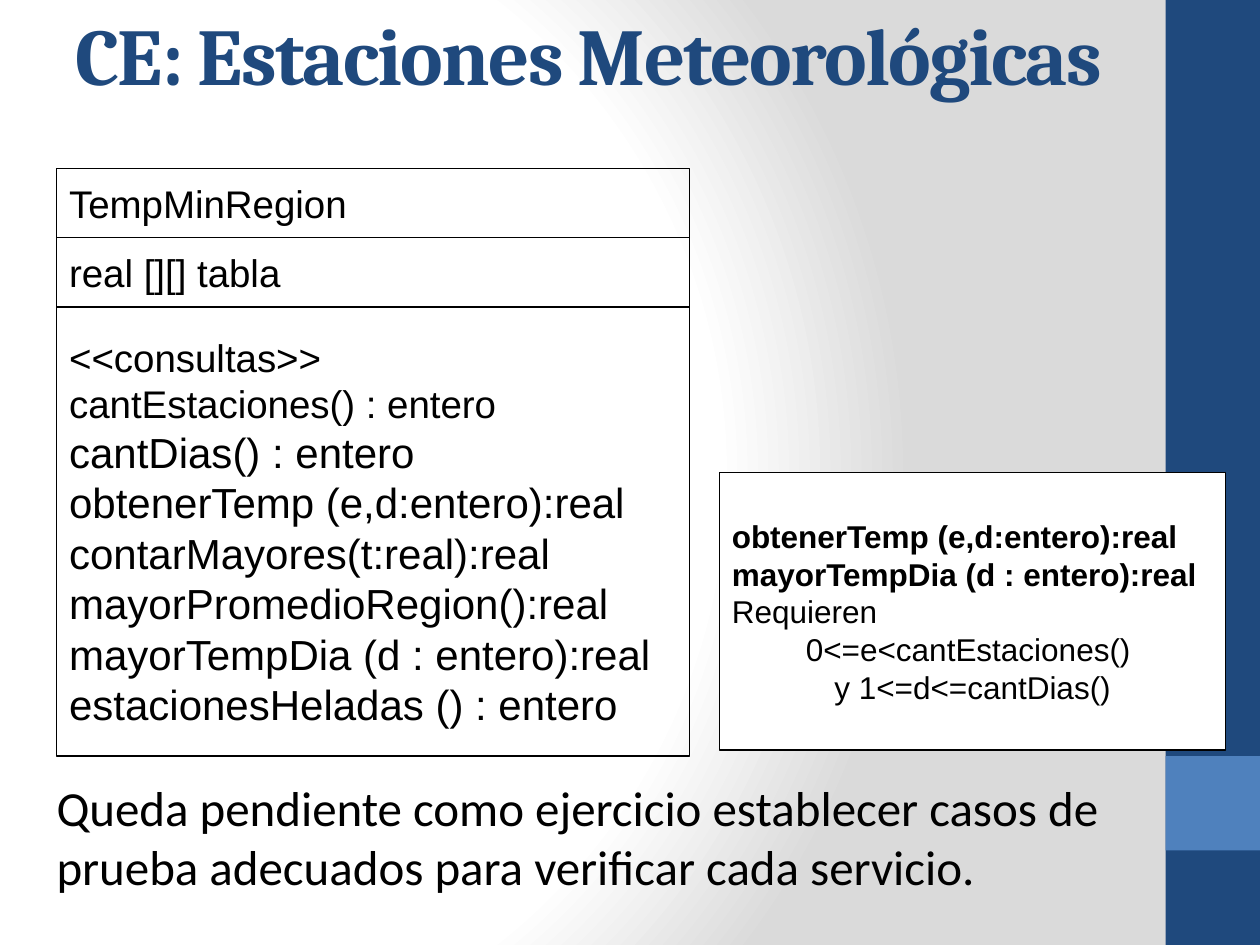
import pptx
import pptx.dml.color
import pptx.enum.shapes
import pptx.enum.text
import pptx.oxml
import pptx.oxml.ns
import pptx.util

Pt = pptx.util.Pt
RGBColor = pptx.dml.color.RGBColor
PP_ALIGN = pptx.enum.text.PP_ALIGN
MSO_ANCHOR = pptx.enum.text.MSO_ANCHOR

NAVY = RGBColor(0x1F, 0x49, 0x7D)
BLUE = RGBColor(0x4F, 0x81, 0xBD)
GREY = RGBColor(0xDA, 0xDA, 0xDA)
WHITE = RGBColor(0xFF, 0xFF, 0xFF)
BLACK = RGBColor(0, 0, 0)

QUERIES = [
    ("<<consultas>>", 22),
    ("cantEstaciones() : entero", 22),
    ("cantDias() : entero", 24),
    ("obtenerTemp (e,d:entero):real", 24),
    ("contarMayores(t:real):real", 24),
    ("mayorPromedioRegion():real", 24),
    ("mayorTempDia (d : entero):real", 24),
    ("estacionesHeladas () : entero", 24),
]
REQUIREMENTS = [
    ("obtenerTemp (e,d:entero):real", True, PP_ALIGN.LEFT),
    ("mayorTempDia (d : entero):real", True, PP_ALIGN.LEFT),
    ("Requieren", False, PP_ALIGN.LEFT),
    ("0<=e<cantEstaciones() ", False, PP_ALIGN.CENTER),
    ("y 1<=d<=cantDias()", False, PP_ALIGN.CENTER),
]


def add_text(p, text, size=22, font="Arial", color=BLACK, bold=False,
             align=PP_ALIGN.LEFT, spacing=None):
    p.alignment = align
    r = p.add_run()
    r.text = text
    r.font.size = Pt(size)
    r.font.name = font
    r.font.bold = bold
    r.font.color.rgb = color
    if spacing is not None:
        r._r.get_or_add_rPr().set("spc", str(spacing))


def add_lines(tf, lines):
    tf.word_wrap = True
    for i, (text, style) in enumerate(lines):
        p = tf.add_paragraph() if i else tf.paragraphs[0]
        add_text(p, text, **style)


def add_box(s, x, y, w, h, fill=None, line=None):
    sp = s.shapes.add_shape(pptx.enum.shapes.MSO_SHAPE.RECTANGLE,
                            Pt(x), Pt(y), Pt(w), Pt(h))
    sp.shadow.inherit = False
    if fill is None:
        sp.fill.background()
    else:
        sp.fill.solid()
        sp.fill.fore_color.rgb = fill
    if line is None:
        sp.line.fill.background()
    else:
        sp.line.color.rgb = line
        sp.line.width = Pt(0.75)
    sp.text_frame.vertical_anchor = MSO_ANCHOR.MIDDLE
    return sp


def add_textbox(s, x, y, w, h, text, anchor=MSO_ANCHOR.TOP, **style):
    tf = s.shapes.add_textbox(Pt(x), Pt(y), Pt(w), Pt(h)).text_frame
    tf.vertical_anchor = anchor
    add_lines(tf, [(text, style)])


def set_background(s):
    fill = s.background.fill
    fill.gradient()
    grad = s._element.cSld.bg.bgPr.find(pptx.oxml.ns.qn("a:gradFill"))
    for child in list(grad):
        grad.remove(child)
    ns = pptx.oxml.ns.nsdecls("a")
    stops = "".join(
        f'<a:gs pos="{pos * 1000}"><a:srgbClr val="{color}"/></a:gs>'
        for pos, color in [(0, WHITE), (75, WHITE), (100, GREY)])
    grad.append(pptx.oxml.parse_xml(f"<a:gsLst {ns}>{stops}</a:gsLst>"))
    grad.append(pptx.oxml.parse_xml(
        f'<a:path {ns} path="circle"><a:fillToRect l="20000" t="50000" '
        'r="100000" b="50000"/></a:path>'))


def add_sidebar(s, x, y, w, h):
    add_box(s, x, y, w, h, fill=NAVY)
    add_box(s, x, y + 0.8 * h, w, 0.1 * h, fill=BLUE)


def add_class_diagram(s, x, y, w, h):
    row = 39.6
    sections = [
        (row, [("TempMinRegion", 22)]),
        (row, [("real [][] tabla", 22)]),
        (h - 2 * row, QUERIES),
    ]
    for height, lines in sections:
        sp = add_box(s, x, y, w, height, line=BLACK)
        add_lines(sp.text_frame, [(t, {"size": size}) for t, size in lines])
        y += height


def add_requirements(s, x, y, w, h):
    sp = add_box(s, x, y, w, h, fill=WHITE, line=BLACK)
    add_lines(sp.text_frame, [(t, {"size": 18, "bold": b, "align": a})
                              for t, b, a in REQUIREMENTS])


def main():
    prs = pptx.Presentation()
    prs.slide_width, prs.slide_height = Pt(720), Pt(540)
    s = prs.slides.add_slide(prs.slide_layouts[6])
    set_background(s)
    add_sidebar(s, 666, 0, 54, 540)
    add_textbox(s, 36, 6.5, 646.5, 47.5, "CE: Estaciones Meteorológicas",
                anchor=MSO_ANCHOR.MIDDLE, size=46, font="Cambria",
                color=NAVY, bold=True, spacing=-100)
    add_class_diagram(s, 32.4, 96.3, 361.5, 335.7)
    add_requirements(s, 411.1, 270, 289.4, 158.6)
    add_textbox(s, 25.2, 440.8, 651.6, 74.2,
                "Queda pendiente como ejercicio establecer casos de prueba "
                "adecuados para verificar cada servicio.",
                size=28, font="Calibri")
    prs.save("out.pptx")


if __name__ == "__main__":
    main()
